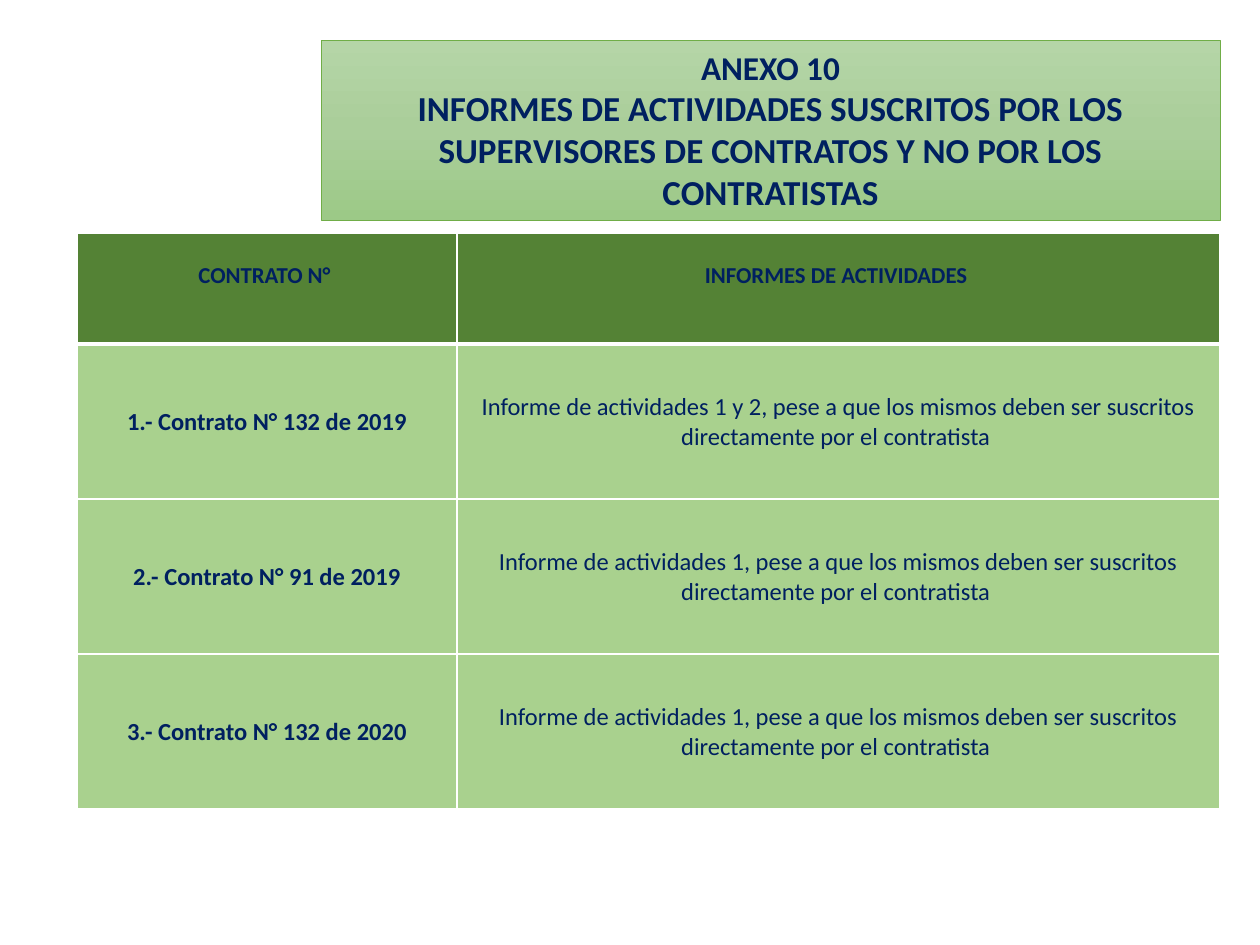
from copy import deepcopy

from lxml import etree
from pptx import Presentation
from pptx import util as u
from pptx.dml.color import RGBColor
from pptx.enum import shapes, text
from pptx.oxml.ns import qn

NAVY, HEADER_GREEN, ROW_GREEN, WHITE = "002060", "548235", "A9D18E", "FFFFFF"
DUTY = "pese a que los mismos deben ser suscritos directamente por el contratista "
ROWS = [
    ("CONTRATO N° ", "INFORMES DE ACTIVIDADES "),
    ("1.- Contrato N° 132 de 2019", "Informe de actividades 1 y 2, " + DUTY),
    ("2.- Contrato N° 91 de 2019", "Informe de actividades 1, " + DUTY),
    ("3.- Contrato N° 132 de 2020", "Informe de actividades 1, " + DUTY),
]


def px(length):
    return u.Emu(round(length * 914400 / 126))


def color(value):
    return RGBColor.from_string(value)


def apply(target, values):
    for name, value in values.items():
        setattr(target, name, value)


def write(paragraph, words, size, bold=True):
    paragraph.alignment = text.PP_ALIGN.CENTER
    run = paragraph.add_run()
    run.text = words
    apply(run.font, {"name": "Calibri", "size": u.Pt(size), "bold": bold})
    run.font.color.rgb = color(NAVY)


def gradient(shape, stops):
    """Fill downwards with (position, colour) stops."""
    shape.fill.gradient()
    shape.fill.gradient_angle = 270
    stop_list = shape.element.spPr.find(".//" + qn("a:gsLst"))
    while len(stop_list) < len(stops):
        stop_list.append(deepcopy(stop_list[-1]))
    for stop, (position, value) in zip(shape.fill.gradient_stops, stops):
        stop.position = position
        stop.color.rgb = color(value)


def add_title(slide):
    title = slide.shapes.add_shape(
        shapes.MSO_SHAPE.RECTANGLE, px(321), px(40), px(899), px(180))
    title.shadow.inherit = False
    gradient(title, [(0, "B5D5A7"), (0.5, "AACE9A"), (1, "9CC987")])
    title.line.color.rgb = color("70AD47")
    title.line.width = u.Pt(0.5)
    frame = title.text_frame
    apply(frame, {"word_wrap": True, "vertical_anchor": text.MSO_ANCHOR.MIDDLE})
    write(frame.paragraphs[0], "ANEXO 10", 19)
    write(frame.add_paragraph(),
          "INFORMES DE ACTIVIDADES SUSCRITOS POR LOS SUPERVISORES DE CONTRATOS "
          "Y NO POR LOS CONTRATISTAS", 20)


def add_borders(cell, widths):
    properties = cell._tc.get_or_add_tcPr()
    for side, width in widths.items():
        line = etree.SubElement(properties, qn(f"a:ln{side}"), w=str(u.Pt(width)))
        fill = etree.SubElement(line, qn("a:solidFill"))
        etree.SubElement(fill, qn("a:srgbClr"), val=WHITE)


def add_contracts(slide):
    heights = [111, 155, 155, 155]
    table = slide.shapes.add_table(
        len(ROWS), 2, px(77), px(233), px(1143), px(sum(heights))).table
    for column, width in zip(table.columns, (380, 763)):
        column.width = px(width)
    for r, (row, height) in enumerate(zip(ROWS, heights)):
        table.rows[r].height = px(height)
        header = r == 0
        for c, words in enumerate(row):
            cell = table.cell(r, c)
            # The header text sits above the middle of its row
            apply(cell, {"vertical_anchor": text.MSO_ANCHOR.MIDDLE,
                         "margin_left": px(1), "margin_right": px(1),
                         "margin_top": px(1),
                         "margin_bottom": px(27 if header else 0)})
            add_borders(cell, {"L": 1, "R": 1, "T": 3 if r == 1 else 1,
                               "B": 3 if header else 1})
            cell.fill.solid()
            cell.fill.fore_color.rgb = color(HEADER_GREEN if header else ROW_GREEN)
            write(cell.text_frame.paragraphs[0], words,
                  13 if header else 14, header or c == 0)


def main():
    deck = Presentation()
    apply(deck, {"slide_width": px(1260), "slide_height": px(945)})
    slide = deck.slides.add_slide(deck.slide_layouts[6])
    add_title(slide)
    add_contracts(slide)
    deck.save("out.pptx")


if __name__ == "__main__":
    main()
